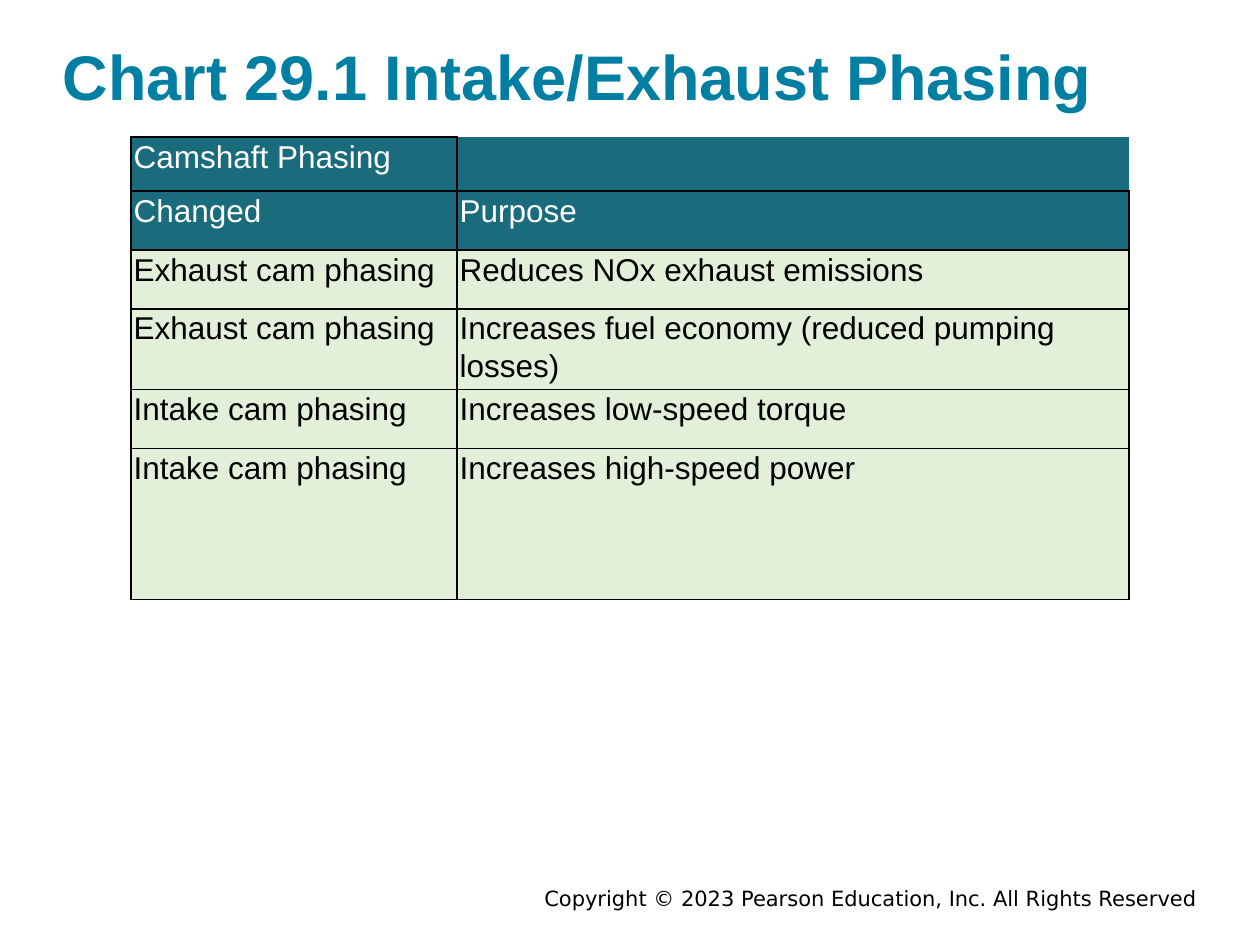
from lxml.etree import SubElement
from pptx import Presentation
from pptx.dml.color import RGBColor
from pptx.enum.text import PP_ALIGN as Align
from pptx.oxml.ns import qn
from pptx.util import Pt

TITLE = "Chart 29.1 Intake/Exhaust Phasing"
ROWS = [
    ("Camshaft Phasing", ""),
    ("Changed", "Purpose"),
    ("Exhaust cam phasing", "Reduces NOx exhaust emissions"),
    ("Exhaust cam phasing", "Increases fuel economy (reduced pumping losses)"),
    ("Intake cam phasing", "Increases low-speed torque"),
    ("Intake cam phasing", "Increases high-speed power"),
]
COPYRIGHT = "Copyright © 2023 Pearson Education, Inc. All Rights Reserved"
HEADER_ROWS = 2
COL_WIDTHS = [186.3, 384]
ROW_HEIGHTS = [31, 33.6, 33.6, 33.6, 33.6, 86.4]

BLUE = RGBColor(0x00, 0x7F, 0xA3)
TEAL = RGBColor(0x1A, 0x6C, 0x7C)
GREEN = RGBColor(0xE2, 0xEF, 0xD9)
BLACK = RGBColor(0, 0, 0)
WHITE = RGBColor(0xFF, 0xFF, 0xFF)


def write(tf, text, size=18, color=BLACK, font="Arial", bold=False,
          align=Align.LEFT, spacing=None, margins=(7.2, 3.6)):
    tf.word_wrap = True
    tf.margin_left = tf.margin_right = Pt(margins[0])
    tf.margin_top = tf.margin_bottom = Pt(margins[1])
    p = tf.paragraphs[0]
    p.alignment = align
    p.line_spacing = spacing
    if text:
        r = p.add_run()
        r.text = text
        r.font.size = Pt(size)
        r.font.name = font
        r.font.bold = bold
        r.font.color.rgb = color


def add_text(s, box, text, **fmt):
    write(s.shapes.add_textbox(*map(Pt, box)).text_frame, text, **fmt)


def set_borders(cell, visible):
    tc_pr = cell._tc.get_or_add_tcPr()
    for side in "LRTB":
        ln = SubElement(tc_pr, qn(f"a:ln{side}"), w=str(Pt(1)))
        if side in visible:
            fill = SubElement(ln, qn("a:solidFill"))
            SubElement(fill, qn("a:srgbClr"), val=str(BLACK))
        else:
            SubElement(ln, qn("a:noFill"))


def add_phasing_table(s, left, top):
    frame = s.shapes.add_table(len(ROWS), len(COL_WIDTHS), Pt(left), Pt(top),
                               Pt(sum(COL_WIDTHS)), Pt(sum(ROW_HEIGHTS)))
    table = frame.table
    table.first_row = table.horz_banding = False
    for col, width in zip(table.columns, COL_WIDTHS):
        col.width = Pt(width)
    for i, (row, height) in enumerate(zip(table.rows, ROW_HEIGHTS)):
        row.height = Pt(height)
        header = i < HEADER_ROWS
        for cell, text in zip(row.cells, ROWS[i]):
            cell.margin_left = cell.margin_right = Pt(1.5)
            cell.margin_top = cell.margin_bottom = 0
            set_borders(cell, "LRTB" if text else "LB")
            cell.fill.solid()
            cell.fill.fore_color.rgb = TEAL if header else GREEN
            p = cell.text_frame.paragraphs[0]
            p.line_spacing = 1.07
            p.font.size = Pt(18)
            if text:
                r = p.add_run()
                r.text = text
                r.font.size = Pt(18)
                r.font.name = "Arial"
                r.font.color.rgb = WHITE if header else BLACK


prs = Presentation()
prs.slide_width, prs.slide_height = Pt(720), Pt(540)
s = prs.slides.add_slide(prs.slide_layouts[6])
add_text(s, (127.4, 502.5, 563.8, 21.8), COPYRIGHT, size=12,
         font="DejaVu Sans", align=Align.RIGHT)
add_text(s, (36, 18, 648, 51), TITLE, size=36, color=BLUE, bold=True,
         margins=(0, 3.6))
add_phasing_table(s, 74.9, 78.3)
prs.save("out.pptx")
